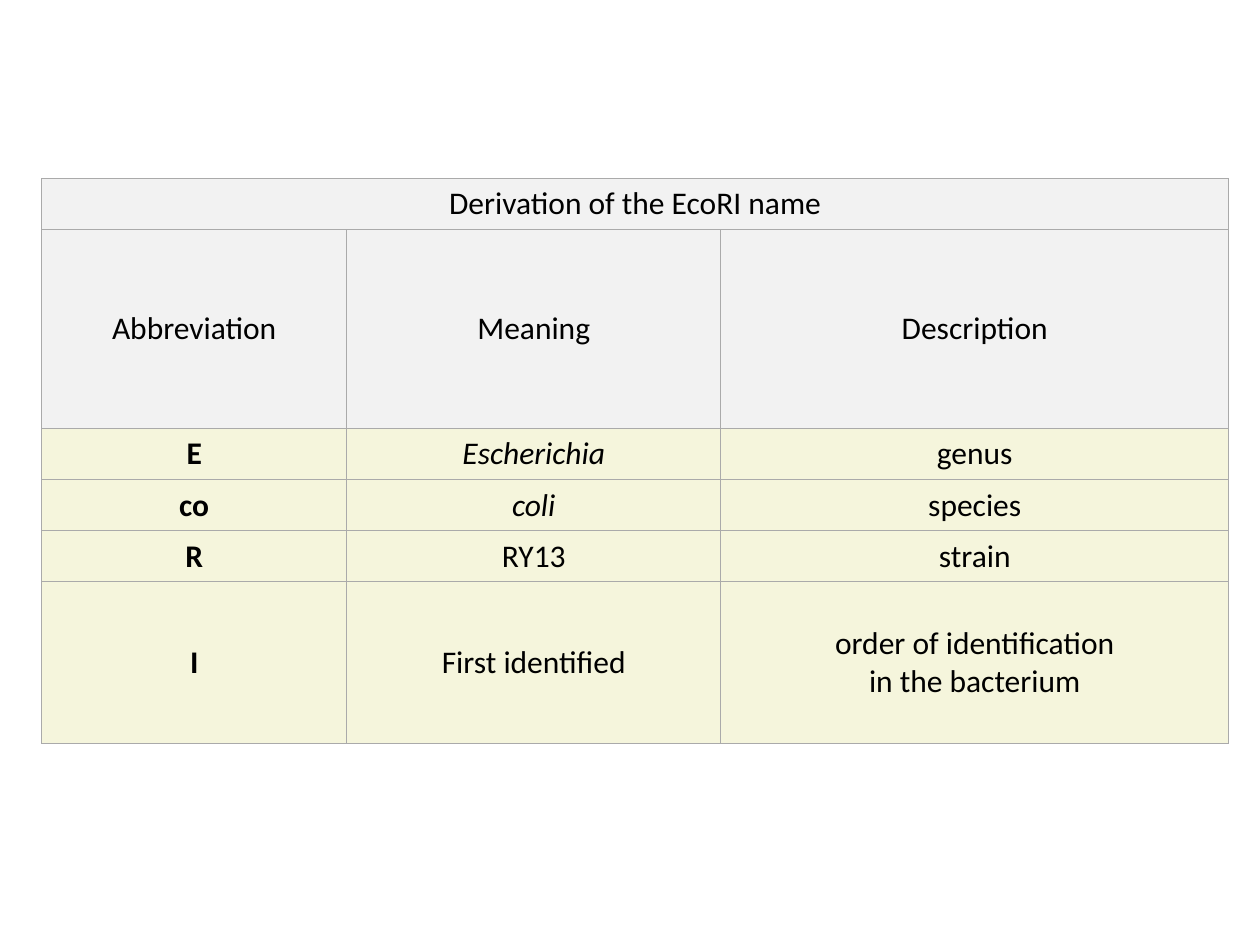
from lxml.etree import SubElement
from pptx import Presentation
from pptx.dml.color import RGBColor
from pptx.enum.text import MSO_ANCHOR as Anchor, PP_ALIGN as Align
from pptx.oxml.ns import qn
from pptx.util import Cm, Pt

HEADER_GREY = RGBColor(0xF2, 0xF2, 0xF2)
BODY_BEIGE = RGBColor(0xF5, 0xF5, 0xDC)
BORDER_GREY = RGBColor(0xAA, 0xAA, 0xAA)
TEXT_BLACK = RGBColor(0, 0, 0)

HEADER_ROWS = 2
COLUMN_WIDTHS = [6.15, 7.54, 10.24]
ROW_HEIGHTS = [1.02, 4.01, 1.02, 1.02, 1.02, 3.25]
ROWS = [
    ["Derivation of the EcoRI name", "", ""],
    ["Abbreviation", "Meaning", "Description"],
    ["E", "Escherichia", "genus"],
    ["co", "coli", "species"],
    ["R", "RY13", "strain"],
    ["I", "First identified", "order of identification\nin the bacterium"],
]
LATIN_NAMES = {"Escherichia", "coli"}


def add_borders(cell):
    """Draw a thin line on all four sides; lines must precede the fill."""
    properties = cell._tc.get_or_add_tcPr()
    for side in ("lnL", "lnR", "lnT", "lnB"):
        line = SubElement(properties, qn(f"a:{side}"), w=str(Pt(0.75)))
        fill = SubElement(line, qn("a:solidFill"))
        SubElement(fill, qn("a:srgbClr"), val=str(BORDER_GREY))


def format_cell(cell, text, color, bold, italic):
    add_borders(cell)
    cell.fill.solid()
    cell.fill.fore_color.rgb = color
    cell.vertical_anchor = Anchor.MIDDLE
    paragraph = cell.text_frame.paragraphs[0]
    paragraph.text = text
    paragraph.alignment = Align.CENTER
    for run in paragraph.runs:
        font = run.font
        font.name, font.size = "Calibri", Pt(18)
        font.bold, font.italic = bold, italic
        font.color.rgb = TEXT_BLACK


def add_name_table(slide, left, top):
    frame = slide.shapes.add_table(
        len(ROW_HEIGHTS), len(COLUMN_WIDTHS), left, top,
        Cm(sum(COLUMN_WIDTHS)), Cm(sum(ROW_HEIGHTS)))
    table = frame.table
    table.first_row = table.horz_banding = False
    for column, width in zip(table.columns, COLUMN_WIDTHS):
        column.width = Cm(width)
    for row, height in zip(table.rows, ROW_HEIGHTS):
        row.height = Cm(height)

    # Title row spans all columns
    table.cell(0, 0).merge(table.cell(0, len(COLUMN_WIDTHS) - 1))

    # Header rows are grey; body rows have a bold first column
    for row_index, texts in enumerate(ROWS):
        is_header = row_index < HEADER_ROWS
        for column_index, text in enumerate(texts):
            format_cell(
                table.cell(row_index, column_index), text,
                color=HEADER_GREY if is_header else BODY_BEIGE,
                bold=not is_header and column_index == 0,
                italic=text in LATIN_NAMES)


def main():
    presentation = Presentation()
    presentation.slide_width, presentation.slide_height = Cm(25.4), Cm(19.05)
    slide = presentation.slides.add_slide(presentation.slide_layouts[6])
    add_name_table(slide, Cm(0.84), Cm(3.6))
    presentation.save("out.pptx")


if __name__ == "__main__":
    main()
